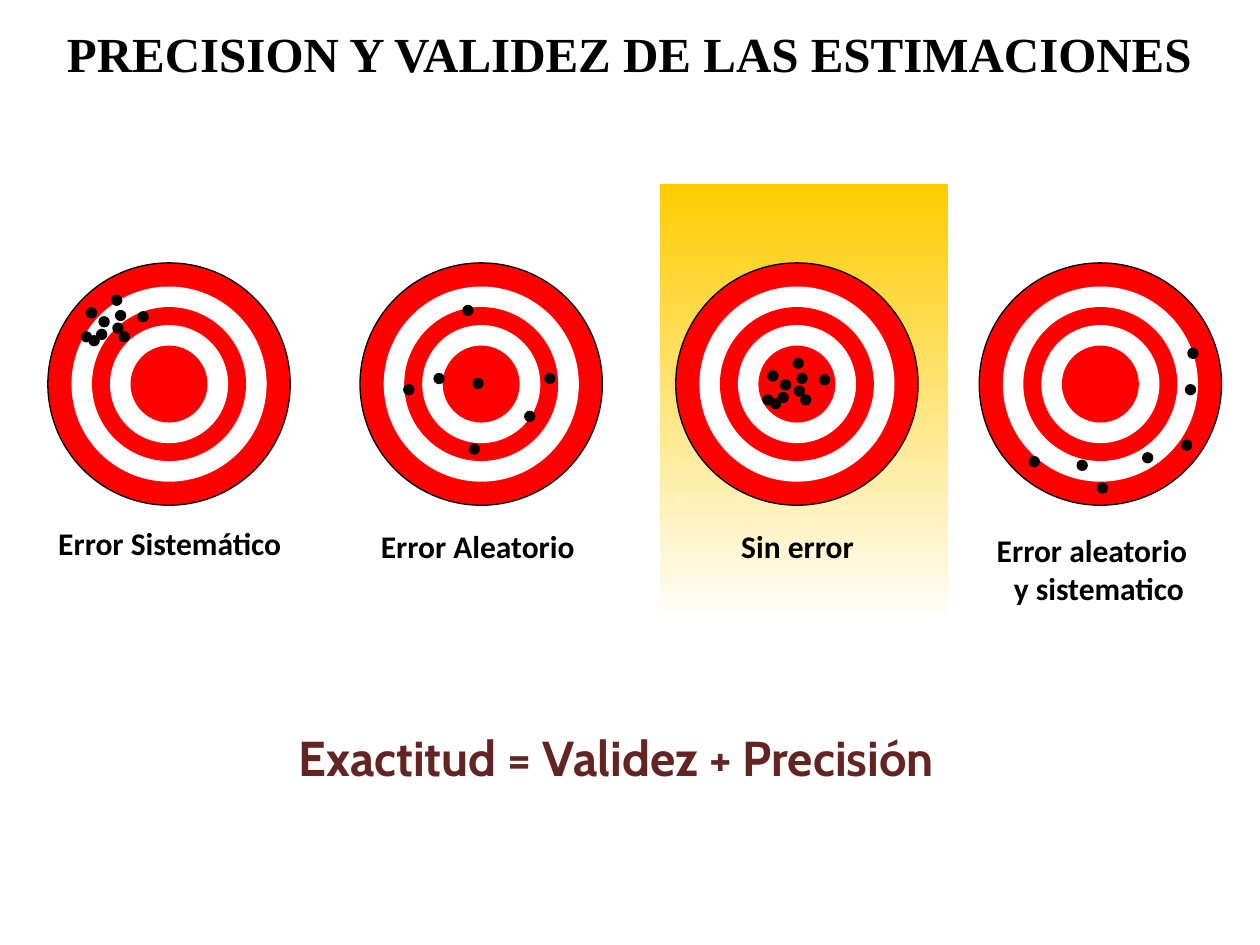
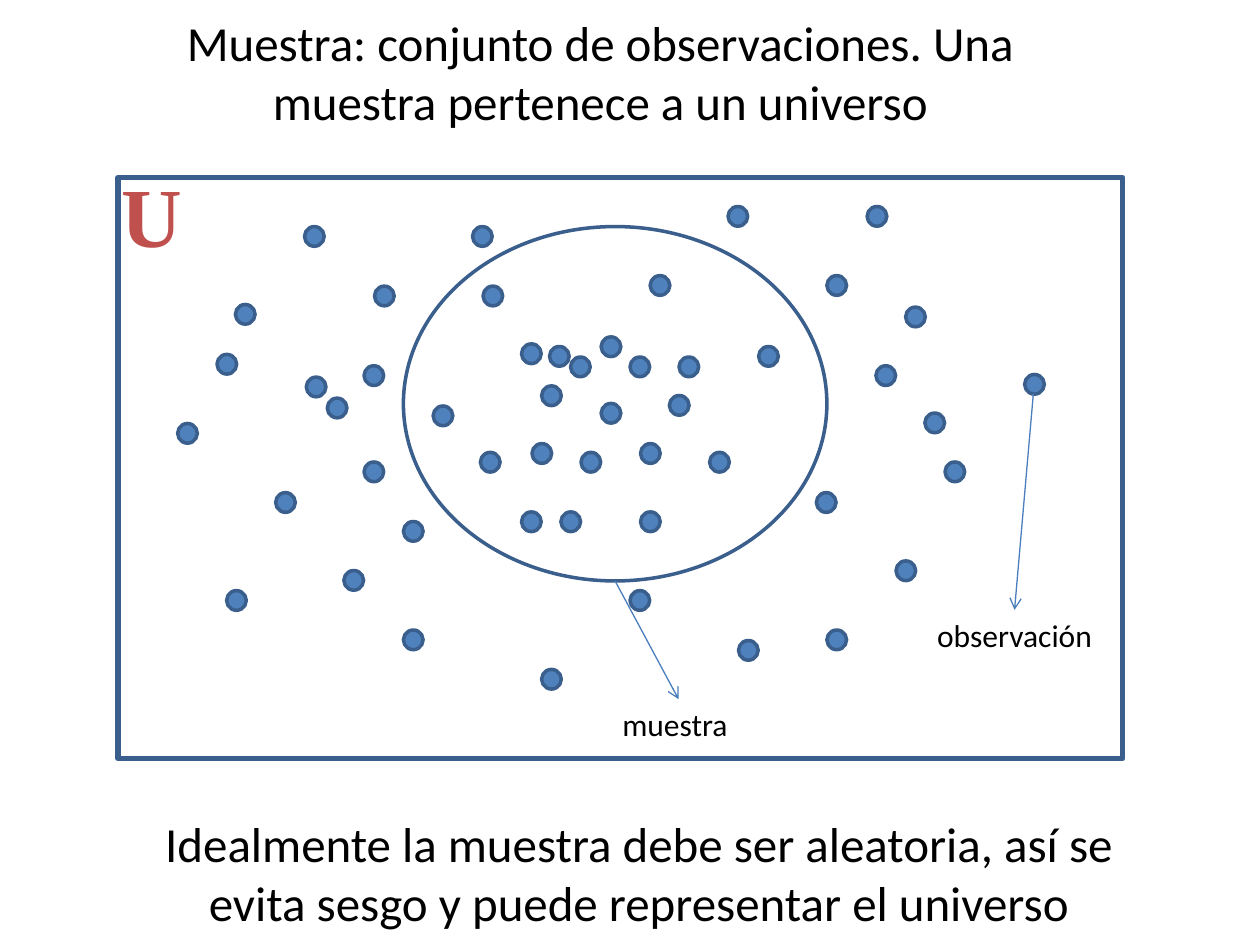
"""Build two slides on precision, validity and sampling."""
from lxml import etree
from pptx import Presentation
from pptx.dml.color import RGBColor
from pptx.enum.shapes import MSO_CONNECTOR, MSO_SHAPE
from pptx.enum.text import MSO_ANCHOR, PP_ALIGN
from pptx.oxml.ns import qn
from pptx.util import Pt

RECT, OVAL = MSO_SHAPE.RECTANGLE, MSO_SHAPE.OVAL
STRAIGHT = MSO_CONNECTOR.STRAIGHT
CENTER, LEFT = PP_ALIGN.CENTER, PP_ALIGN.LEFT
MIDDLE = MSO_ANCHOR.MIDDLE

BLACK = RGBColor(0x00, 0x00, 0x00)
WHITE = RGBColor(0xFF, 0xFF, 0xFF)
RED = RGBColor(0xFF, 0x00, 0x00)
GOLD = RGBColor(0xFF, 0xCC, 0x00)
MAROON = RGBColor(0x63, 0x25, 0x23)
BRICK = RGBColor(0xC0, 0x50, 0x4D)
BLUE = RGBColor(0x4F, 0x81, 0xBD)
NAVY = RGBColor(0x3A, 0x5F, 0x8C)
ARROW_BLUE = RGBColor(0x4B, 0x7E, 0xBC)

TITLE = {"name": "Times New Roman", "size": Pt(28), "bold": True}
FORMULA = {"name": "Cabin", "size": Pt(28), "bold": True}
STATEMENT = {"name": "Calibri", "size": Pt(28)}
LABEL = {"name": "Calibri", "size": Pt(18)}
LABEL_BOLD = {**LABEL, "bold": True}
UNIVERSE = {"name": "Times New Roman", "size": Pt(48), "bold": True}


def add_shape(s, kind, x, y, w, h, fill=None, line=None, weight=0.75):
    sp = s.shapes.add_shape(kind, Pt(x), Pt(y), Pt(w), Pt(h))
    sp.shadow.inherit = False
    if fill is None:
        sp.fill.background()
    else:
        sp.fill.solid()
        sp.fill.fore_color.rgb = fill
    if line is None:
        sp.line.fill.background()
    else:
        sp.line.color.rgb = line
        sp.line.width = Pt(weight)
    return sp


def add_text(s, x, y, w, h, lines, style, color=BLACK, align=CENTER, wrap=True):
    sp = s.shapes.add_textbox(Pt(x), Pt(y), Pt(w), Pt(h))
    tf = sp.text_frame
    tf.word_wrap = wrap
    for i, line in enumerate(lines):
        p = tf.paragraphs[0] if i == 0 else tf.add_paragraph()
        p.alignment = align
        r = p.add_run()
        r.text = line
        for key, value in style.items():
            setattr(r.font, key, value)
        r.font.color.rgb = color
    return sp


prs = Presentation()
prs.slide_width, prs.slide_height = Pt(720), Pt(540)
blank = prs.slide_layouts[6]

s = prs.slides.add_slide(blank)
sp = add_text(s, 16.5, 4.5, 686, 52, ["PRECISION Y VALIDEZ DE LAS ESTIMACIONES"], TITLE)
sp.text_frame.vertical_anchor = MIDDLE
add_text(s, 116, 412, 472, 41, ["Exactitud = Validez + Precisión"], FORMULA, MAROON)

sp = add_shape(s, RECT, 377, 105, 164.5, 254, WHITE)
sp.fill.gradient()
sp.fill.gradient_angle = 270
for stop, color, position in zip(sp.fill.gradient_stops, (GOLD, WHITE), (0, 1)):
    stop.color.rgb = color
    stop.position = position

target_y, hit_size = 219.5, 6.5
rings = [(138.5, RED, BLACK), (111.5, WHITE, None), (88, RED, None),
         (67.5, WHITE, None), (44, RED, None)]
cluster = [(1.4, 4), (-12.2, 11.2), (-16.6, 9), (-13.7, -4.7), (0.7, -11.9),
           (-6.5, 0.4), (-7.9, 7.6), (5, 9), (15.8, -2.5), (2.9, -3.2)]
shifted = [(dx - 30.6, dy - 36) for dx, dy in cluster]
scattered = [(-4, 37.1), (-7.6, -42.1), (39.2, -3.2), (-41.4, 3.2),
             (27.7, 18.4), (-24.1, -3.2), (-1.8, -0.4)]
scattered_shifted = [(-10.4, 46.4), (51.5, 3.2), (27, 42.1), (52.9, -17.6),
                     (49.3, 34.9), (-37.8, 44.3), (1.1, 59.4)]
targets = [
    (96.6, shifted, ["Error Sistemático"], (14.5, 296, 165, 50)),
    (275, scattered, ["Error Aleatorio"], (202, 297.5, 142, 29)),
    (455.4, cluster, ["Sin error"], (411, 297.5, 89.5, 29)),
    (628.8, scattered_shifted, ["Error aleatorio", "y sistematico"], (555, 300, 138, 72)),
]
for target_x, hits, label, box in targets:
    for size, fill, line in rings:
        add_shape(s, OVAL, target_x - size / 2, target_y - size / 2, size, size, fill, line)
    for dx, dy in hits:
        add_shape(s, OVAL, target_x + dx - hit_size / 2, target_y + dy - hit_size / 2,
                  hit_size, hit_size, BLACK)
    sp = add_text(s, *box, label, LABEL_BOLD)
    for p in sp.text_frame.paragraphs[1:]:
        p._p.get_or_add_pPr().set("marL", str(Pt(8)))

s = prs.slides.add_slide(blank)
add_text(s, 54, 3.5, 578, 75,
         ["Muestra: conjunto de observaciones. Una muestra pertenece a un universo"], STATEMENT)
add_shape(s, RECT, 67.5, 101.5, 574, 332, line=NAVY, weight=3)
add_text(s, 62.5, 90, 50, 65.5, ["U"], UNIVERSE, BRICK, LEFT, wrap=False)
add_shape(s, OVAL, 230.5, 129.5, 242, 202.5, line=NAVY, weight=2)

sample = [
    (304, 253.5), (343.5, 192.5), (343.5, 230.5), (366, 253.5), (298, 292.5),
    (382.5, 226), (314, 198), (366, 292.5), (332, 258.5), (326, 204),
    (388, 204), (405.5, 258.5), (298, 196.5), (320.5, 292.5), (360, 204),
    (309.5, 220.5), (371.5, 157.5), (433.5, 198), (247.5, 232), (276, 163.5),
    (274.5, 258.5),
]
rest = [
    (416, 118), (472.5, 157.5), (466.5, 281.5), (585.5, 214), (512, 320.5),
    (528.5, 236), (360, 337.5), (472.5, 360), (422, 366), (495.5, 118),
    (517.5, 175.5), (540, 264), (500.5, 209), (134.5, 174), (175, 215.5),
    (187, 227.5), (208, 209), (230.5, 298), (174, 129.5), (124, 202.5),
    (157.5, 281.5), (129.5, 337.5), (101.5, 242), (196.5, 326), (230.5, 360),
    (214, 163.5), (208, 264), (270, 129.5), (309.5, 382.5),
]
for x, y in sample + rest:
    add_shape(s, OVAL, x, y, 11.25, 11.25, BLUE, NAVY, 2)

add_text(s, 60, 461.5, 610, 75,
         ["Idealmente la muestra debe ser aleatoria, así se evita sesgo y puede "
          "representar el universo"], STATEMENT)

callouts = [
    ("observación", (523.5, 348.5, 112.5, 29), CENTER, (590.5, 225)),
    ("muestra", (348.5, 399.5, 78.5, 29), LEFT, (351.5, 332)),
]
for label, box, align, (x, y) in callouts:
    sp = add_text(s, *box, [label], LABEL, align=align)
    arrow = s.shapes.add_connector(STRAIGHT, Pt(x), Pt(y), Pt(x), Pt(y))
    arrow.end_connect(sp, 0)
    arrow.line.color.rgb = ARROW_BLUE
    arrow.line.width = Pt(0.75)
    etree.SubElement(arrow.line._get_or_add_ln(), qn("a:tailEnd"), type="arrow")
    etree.SubElement(arrow._element.spPr, qn("a:effectLst"))

prs.save("out.pptx")
